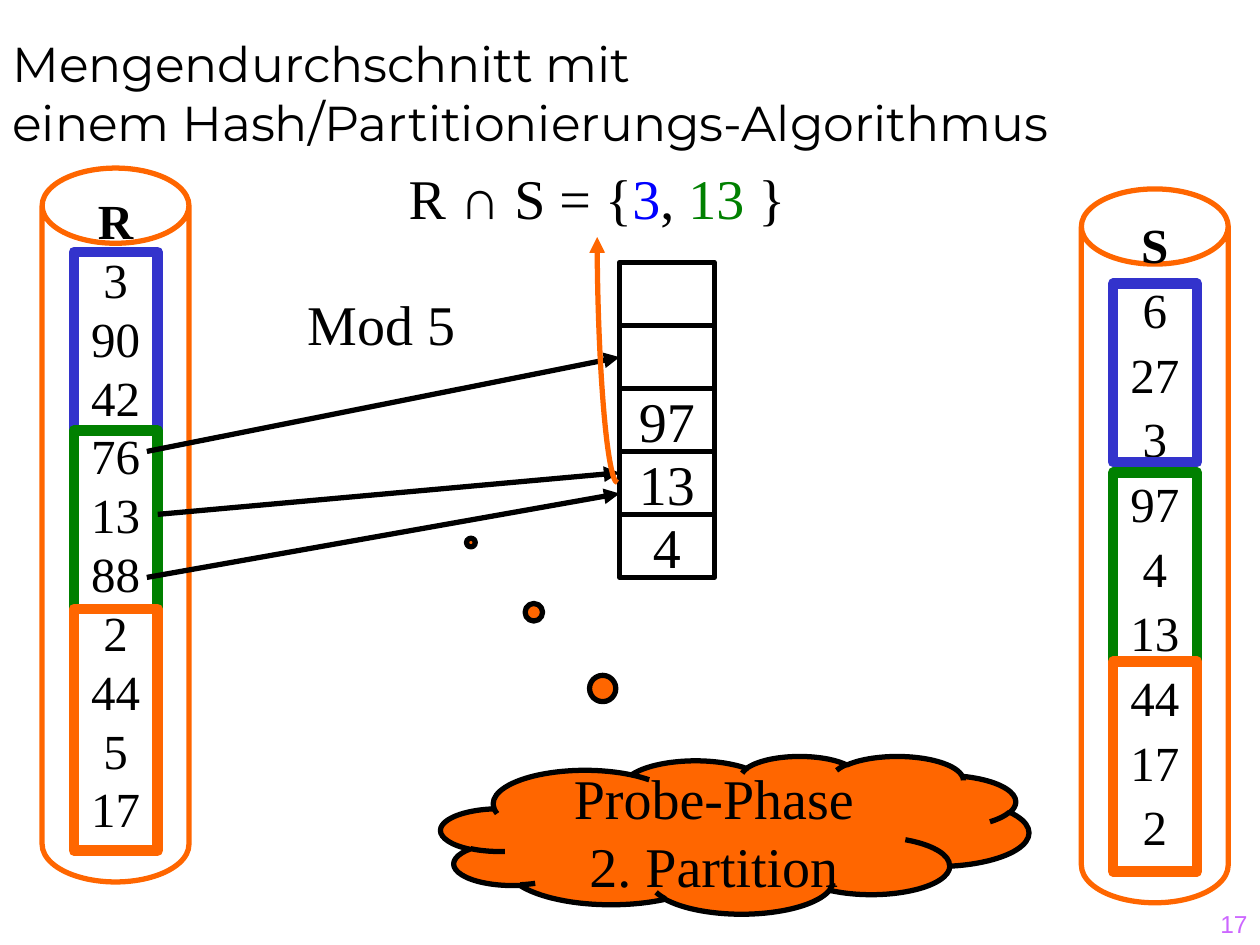
from lxml import etree
from pptx import Presentation
from pptx.dml.color import RGBColor
from pptx.enum.shapes import MSO_CONNECTOR, MSO_SHAPE
from pptx.enum.text import MSO_ANCHOR, MSO_AUTO_SIZE, PP_ALIGN
from pptx.oxml.ns import qn
from pptx.util import Cm, Pt

BLACK = RGBColor(0x00, 0x00, 0x00)
WHITE = RGBColor(0xFF, 0xFF, 0xFF)
ORANGE = RGBColor(0xFF, 0x66, 0x00)
INDIGO = RGBColor(0x33, 0x33, 0xCC)
BLUE = RGBColor(0x00, 0x00, 0xFF)
GREEN = RGBColor(0x00, 0x80, 0x00)
VIOLET = RGBColor(0xCC, 0x66, 0xFF)

SERIF = "Times New Roman"
STRAIGHT, CURVE = MSO_CONNECTOR.STRAIGHT, MSO_CONNECTOR.CURVE
CAN, RECT, CLOUD = MSO_SHAPE.CAN, MSO_SHAPE.RECTANGLE, MSO_SHAPE.CLOUD_CALLOUT
MIDDLE, BOTTOM = MSO_ANCHOR.MIDDLE, MSO_ANCHOR.BOTTOM
LEFT, CENTER, RIGHT = PP_ALIGN.LEFT, PP_ALIGN.CENTER, PP_ALIGN.RIGHT
FIT_SHAPE = MSO_AUTO_SIZE.SHAPE_TO_FIT_TEXT

prs = Presentation()
prs.slide_width, prs.slide_height = Cm(25.4), Cm(19.05)
slide = prs.slides.add_slide(prs.slide_layouts[6])


def write(frame, lines, size, font=SERIF, color=BLACK, align=CENTER, wrap=False):
    frame.word_wrap = wrap
    frame.text = "\n".join(lines)
    for paragraph in frame.paragraphs:
        paragraph.alignment = align
        paragraph.font.size = Pt(size)
        paragraph.font.name = font
        paragraph.font.color.rgb = color


def draw(kind, left, top, width, height, line, weight=3, fill=None):
    shape = slide.shapes.add_shape(kind, Cm(left), Cm(top), Cm(width), Cm(height))
    shape.shadow.inherit = False
    shape.line.color.rgb = line
    shape.line.width = Pt(weight)
    if fill is None:
        shape.fill.background()
    else:
        shape.fill.solid()
        shape.fill.fore_color.rgb = fill
    shape.text_frame.vertical_anchor = MIDDLE
    return shape


page_number = slide.shapes.add_textbox(Cm(20.12), Cm(17.78), Cm(5.28), Cm(1.27)).text_frame
page_number.vertical_anchor = BOTTOM
write(page_number, ["17"], 14, "Arial", VIOLET, RIGHT, True)

title = slide.shapes.add_textbox(0, 0, Cm(25.4), Cm(3.18)).text_frame
title.vertical_anchor = BOTTOM
write(title, ["Mengendurchschnitt mit \veinem Hash/Partitionierungs-Algorithmus"],
      28, "Montserrat", BLACK, LEFT, True)

intersection = slide.shapes.add_textbox(Cm(7.82), Cm(3.18), Cm(8.43), Cm(1.6)).text_frame
write(intersection, [""], 32)
intersection.auto_size = FIT_SHAPE
for text, color in [("R ∩ S = {", BLACK), ("3", BLUE), (", ", BLACK),
                    ("13", GREEN), (" }", BLACK)]:
    run = intersection.paragraphs[0].add_run()
    run.text = text
    run.font.color.rgb = color

# name, values, left, top, line spacing, bottom inset, partitions (top, height)
relations = [
    ("R", [3, 90, 42, 76, 13, 88, 2, 44, 5, 17], 0.85, 3.39, 1.0, 1.32,
     [(5.08, 3.6), (8.68, 3.6), (12.28, 4.87)]),
    ("S", [6, 27, 3, 97, 4, 13, 44, 17, 2], 21.8, 3.81, 1.1, 1.43,
     [(5.72, 3.6), (9.53, 3.81), (13.34, 4.23)]),
]
for name, values, left, top, spacing, inset, partitions in relations:
    relation = draw(CAN, left, top, 2.96, 14.39, ORANGE, fill=WHITE)
    relation.adjustments[0] = 0.512
    column = relation.text_frame
    column.margin_bottom = Cm(inset)
    write(column, [name, *map(str, values)], 28)
    column.paragraphs[0].font.bold = True
    for paragraph in column.paragraphs:
        paragraph.line_spacing = spacing
    for (part_top, height), color in zip(partitions, [INDIGO, GREEN, ORANGE]):
        draw(RECT, left + 0.64, part_top, 1.69, height, color, 6)

for row, value in enumerate(["", "", "97", "13", "4"]):
    bucket = draw(RECT, 12.49, 5.29 + 1.27 * row, 1.91, 1.27, BLACK, fill=WHITE)
    if value:
        write(bucket.text_frame, [value], 32)

hash_function = slide.shapes.add_textbox(Cm(5.93), Cm(5.72), Cm(3.51), Cm(1.6)).text_frame
write(hash_function, ["Mod 5"], 32)
hash_function.auto_size = FIT_SHAPE

phase = draw(CLOUD, 8.89, 15.24, 11.85, 3.18, BLACK, fill=ORANGE)
phase.adjustments[0], phase.adjustments[1] = -0.449, -1.853
write(phase.text_frame, ["Probe-Phase", "2. Partition"], 32, wrap=True)

for kind, x1, y1, x2, y2, color in [
    (STRAIGHT, 2.96, 9.1, 12.49, 7.2, BLACK),
    (STRAIGHT, 3.18, 10.37, 12.49, 9.53, BLACK),
    (CURVE, 12.45, 9.73, 12.04, 4.78, ORANGE),
    (STRAIGHT, 2.96, 11.64, 12.49, 9.95, BLACK),
]:
    arrow = slide.shapes.add_connector(kind, Cm(x1), Cm(y1), Cm(x2), Cm(y2))
    arrow.line.color.rgb = color
    arrow.line.width = Pt(3)
    properties = arrow._element.spPr
    etree.SubElement(properties.find(qn("a:ln")), qn("a:tailEnd"), type="triangle")
    etree.SubElement(properties, qn("a:effectLst"))
    if kind == CURVE:
        properties.find(qn("a:prstGeom")).set("prst", "curvedConnector2")

prs.save("out.pptx")
